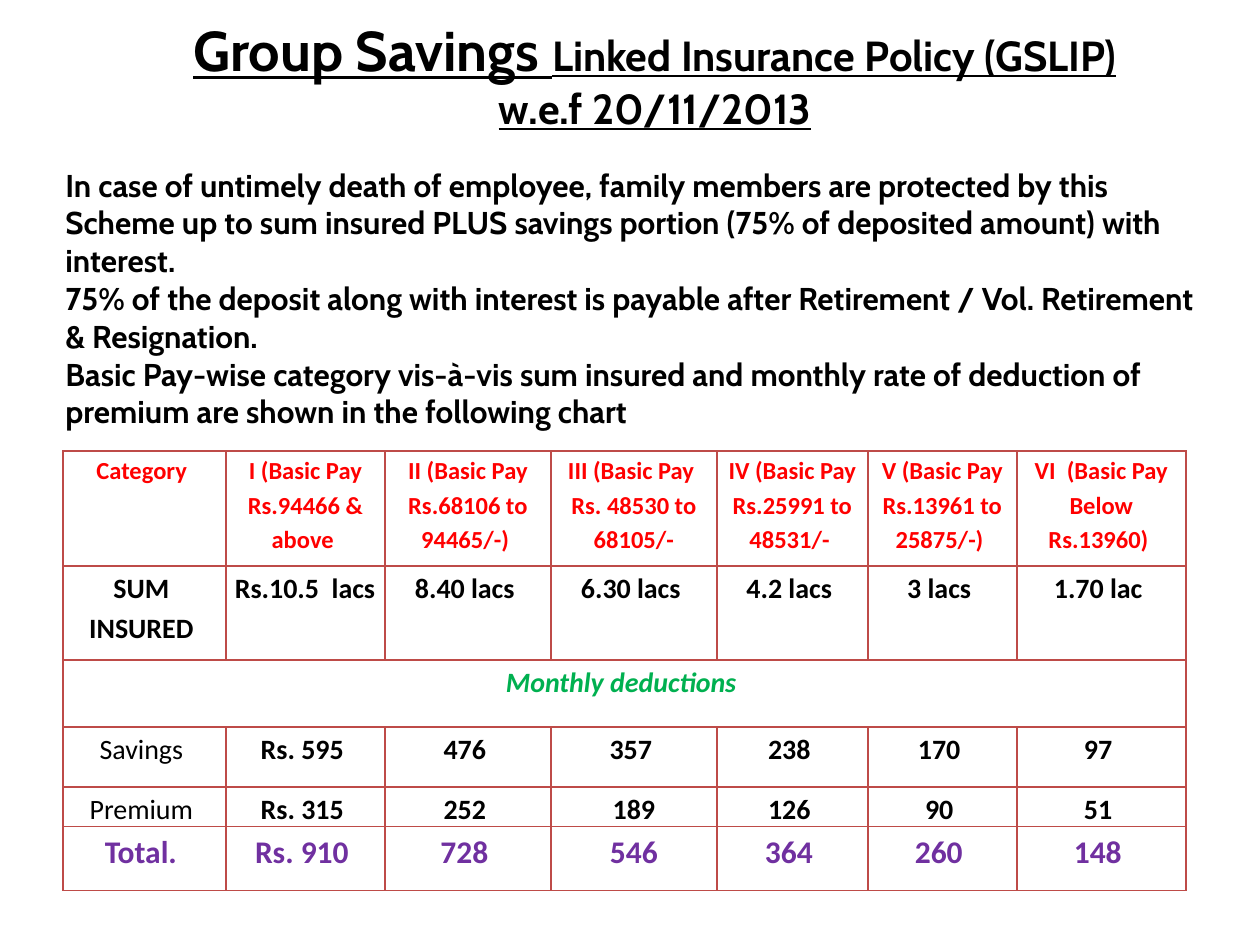
import pptx
import pptx.dml.color
import pptx.enum.text
import pptx.oxml
import pptx.oxml.ns
import pptx.util

RGBColor = pptx.dml.color.RGBColor
ALIGN = pptx.enum.text.PP_ALIGN
ANCHOR = pptx.enum.text.MSO_ANCHOR

BLACK = RGBColor(0x00, 0x00, 0x00)
RED = RGBColor(0xFF, 0x00, 0x00)
GREEN = RGBColor(0x00, 0xB0, 0x50)
PURPLE = RGBColor(0x70, 0x30, 0xA0)
BORDER = RGBColor(0xBE, 0x4B, 0x48)

# Content; a trailing space is part of the centred cell text
TITLE = [
    [("Group Savings ", 32), ("Linked Insurance Policy (GSLIP)", 24)],
    [("w.e.f 20/11/2013", 24)],
]
BODY = [
    "In case of untimely death of employee, family members are protected by this "
    "Scheme up to sum insured PLUS savings portion (75% of deposited amount) with interest.",
    "75% of the deposit along with interest is payable after Retirement / "
    "Vol. Retirement & Resignation.",
    "Basic Pay-wise category vis-à-vis sum insured and monthly rate of deduction of "
    "premium are shown in the following chart",
]
ROWS = [
    ["Category ", "I (Basic Pay Rs.94466 & above ", "II (Basic Pay Rs.68106 to 94465/-) ",
     "III (Basic Pay \nRs. 48530 to 68105/-", "IV (Basic Pay Rs.25991 to 48531/- ",
     "V (Basic Pay Rs.13961 to 25875/-) ", "VI  (Basic Pay Below Rs.13960) "],
    ["SUM  INSURED ", "Rs.10.5  lacs", "8.40 lacs ", "6.30 lacs ", "4.2 lacs ",
     "3 lacs ", "1.70 lac "],
    ["Monthly deductions "],
    ["Savings ", "Rs. 595 ", "476 ", "357 ", "238 ", "170 ", "97 "],
    ["Premium ", "Rs. 315 ", "252 ", "189", "126 ", "90 ", "51 "],
    ["Total. ", "Rs. 910 ", "728 ", "546", "364 ", "260 ", "148 "],
]
ROW_FORMATS = [
    {"size": 14, "color": RED},
    {"size": 16},
    {"size": 16, "color": GREEN, "italic": True},
    {"size": 16},
    {"size": 16},
    {"size": 18, "color": PURPLE},
]
PLAIN_LABELS = ("Savings ", "Premium ")
LEFT_CELLS = ("Rs.10.5  lacs",)

# Layout in px
SLIDE_SIZE = (1260, 945)
TITLE_BOX = (13, 0, 1284, 149)
BODY_BOX = (53, 158, 1167, 280)
TABLE_ORIGIN = (63, 451)
COLUMN_WIDTHS = [163, 159, 166, 166, 151, 149, 169]
ROW_HEIGHTS = [115, 94, 67, 60, 39, 64]


def px(length):
    return pptx.util.Emu(round(length * 914400 / 126))


def write_text(frame, paragraphs, font="Cabin", size=18, color=BLACK, bold=True,
               italic=False, underline=False, align=ALIGN.LEFT, spacing=None):
    """Each paragraph is a string, or a list of (text, size) runs."""
    frame.word_wrap = True
    for index, content in enumerate(paragraphs):
        paragraph = frame.paragraphs[0] if index == 0 else frame.add_paragraph()
        paragraph.alignment = align
        if spacing:
            paragraph.line_spacing = spacing
        runs = [(content, size)] if isinstance(content, str) else content
        for text, run_size in runs:
            run = paragraph.add_run()
            run.text = text
            run.font.name = font
            run.font.size = pptx.util.Pt(run_size)
            run.font.color.rgb = color
            run.font.bold = bold
            run.font.italic = italic
            run.font.underline = underline


def add_text_box(slide, box, paragraphs, **text_format):
    shape = slide.shapes.add_textbox(*map(px, box))
    shape.text_frame.vertical_anchor = ANCHOR.MIDDLE
    write_text(shape.text_frame, paragraphs, **text_format)


def set_borders(cell):
    properties = cell._tc.get_or_add_tcPr()
    for position, side in enumerate(("lnL", "lnR", "lnT", "lnB")):
        line = pptx.oxml.parse_xml(
            f'<a:{side} {pptx.oxml.ns.nsdecls("a")} w="12700"><a:solidFill>'
            f'<a:srgbClr val="{BORDER}"/></a:solidFill></a:{side}>')
        properties.insert(position, line)


def add_deduction_table(slide):
    frame = slide.shapes.add_table(
        len(ROWS), len(COLUMN_WIDTHS), *map(px, TABLE_ORIGIN),
        px(sum(COLUMN_WIDTHS)), px(sum(ROW_HEIGHTS)))
    table = frame.table
    table.first_row = table.horz_banding = False
    for column, width in zip(table.columns, COLUMN_WIDTHS):
        column.width = px(width)
    for row, height in zip(table.rows, ROW_HEIGHTS):
        row.height = px(height)

    for row, texts, row_format in zip(table.rows, ROWS, ROW_FORMATS):
        cells = list(row.cells)
        for cell in cells:
            cell.fill.background()
            set_borders(cell)
            cell.margin_left = cell.margin_right = px(9)
            cell.margin_top, cell.margin_bottom = px(1), 0
        if len(texts) == 1:
            cells[0].merge(cells[-1])
        for cell, text in zip(cells, texts):
            write_text(cell.text_frame, text.split("\n"), font="Calibri", spacing=1.15,
                       bold=text not in PLAIN_LABELS,
                       align=ALIGN.LEFT if text in LEFT_CELLS else ALIGN.CENTER,
                       **row_format)


def main():
    presentation = pptx.Presentation()
    presentation.slide_width, presentation.slide_height = map(px, SLIDE_SIZE)
    slide = presentation.slides.add_slide(presentation.slide_layouts[6])

    # Heading, explanation, table of deductions
    add_text_box(slide, TITLE_BOX, TITLE, underline=True, align=ALIGN.CENTER)
    add_text_box(slide, BODY_BOX, BODY)
    add_deduction_table(slide)

    presentation.save("out.pptx")


if __name__ == "__main__":
    main()
